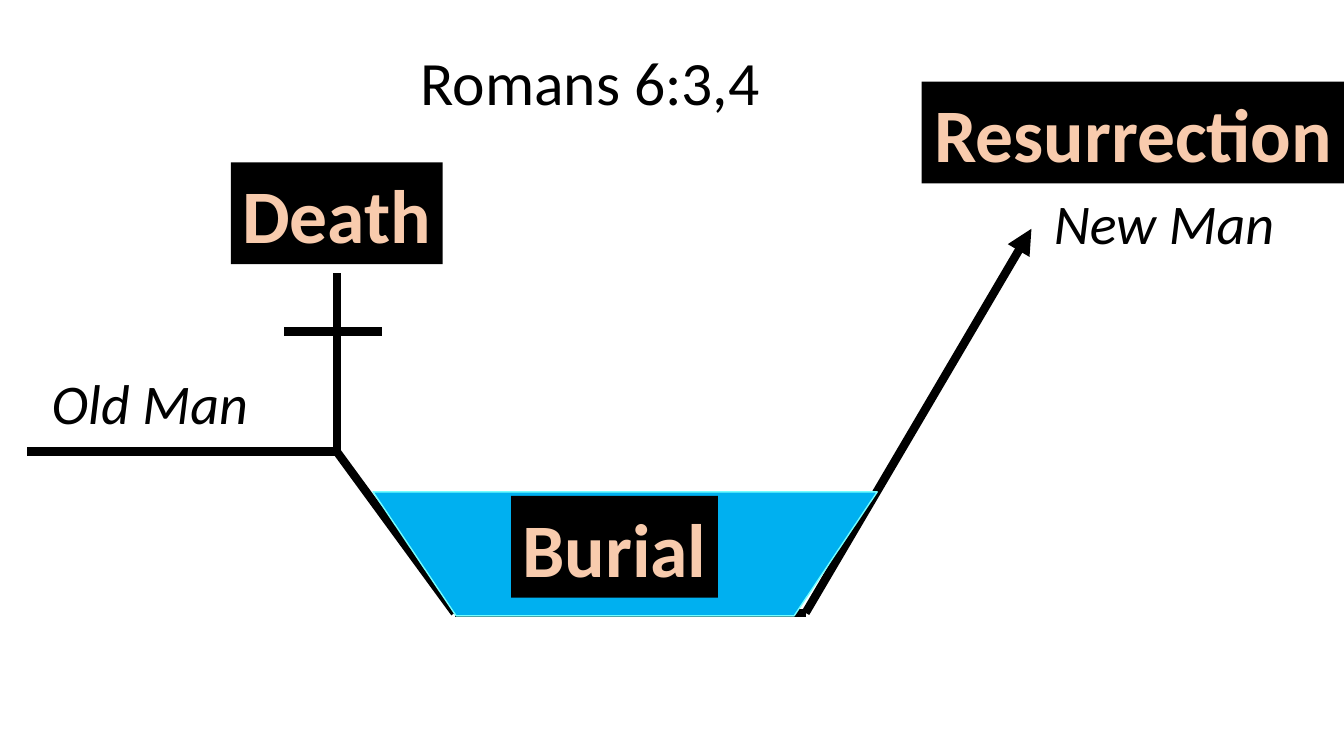
"""Builds the Romans 6:3,4 slide on death, burial and resurrection."""
from lxml.etree import SubElement
from pptx import Presentation
from pptx.dml.color import RGBColor
from pptx.enum.shapes import MSO_CONNECTOR, MSO_SHAPE
from pptx.enum.text import MSO_ANCHOR, MSO_AUTO_SIZE, PP_ALIGN
from pptx.oxml.ns import qn
from pptx.util import Inches, Pt

COLOURS = {"ink": "000000", "water": "00B0F0", "water_edge": "73FEFF",
           "label": "F8CBAD", "label_edge": "ED7D31"}
LEFT_BANK = (3.34, 4.48)
POOL_LEFT = (4.51, 6.08)
POOL_RIGHT = (7.99, 6.08)
PATH_LINES = [((0.27, 4.48), LEFT_BANK), (LEFT_BANK, POOL_LEFT),
              (POOL_LEFT, POOL_RIGHT)]
CROSS_LINES = [((3.34, 2.71), LEFT_BANK), ((2.82, 3.29), (3.79, 3.29))]
CAPTIONS = [("Old Man", (0.36, 3.61, 2.25, 1.31)),
            ("New Man", (10.1, 1.82, 2.89, 1.31))]
STAGES = [("Death", (2.29, 1.61, 2.1, 1.01)),
          ("Burial", (5.07, 4.92, 2.05, 1.01)),
          ("Resurrection", (9.14, 0.81, 4.2, 1.01))]


def colour(name):
    """Return a named colour."""
    return RGBColor.from_string(COLOURS[name])


def write_text(shape, text, colour_name, font_format, frame_format, alignment):
    """Write one formatted paragraph into a shape."""
    frame = shape.text_frame
    for name, value in frame_format.items():
        setattr(frame, name, value)
    paragraph = frame.paragraphs[0]
    paragraph.alignment = alignment
    run = paragraph.add_run()
    run.text = text
    for name, value in {"name": "Calibri", **font_format}.items():
        setattr(run.font, name, value)
    run.font.color.rgb = colour(colour_name)
    return run


def add_title(slide, text):
    """Place the title at the top of the slide."""
    title = slide.shapes.title
    box = {"left": 3.79, "top": 0.39, "width": 4.19, "height": 0.84}
    for name, value in box.items():
        setattr(title, name, Inches(value))
    write_text(title, text, "ink", {"size": Pt(44)},
               {"word_wrap": True, "auto_size": MSO_AUTO_SIZE.NONE,
                "vertical_anchor": MSO_ANCHOR.TOP,
                "margin_left": Inches(0.38)}, PP_ALIGN.LEFT)


def add_line(slide, start, end, arrow=False):
    """Draw a thick line, with an arrowhead at its end if wanted."""
    line = slide.shapes.add_connector(
        MSO_CONNECTOR.STRAIGHT, *map(Inches, start + end))
    line.line.width = Pt(6)
    line.line.color.rgb = colour("ink")
    if arrow:
        SubElement(line.line._get_or_add_ln(), qn("a:tailEnd"), type="triangle")
    SubElement(line._element.spPr, qn("a:effectLst"))


def add_filled_shape(slide, kind, box, fill_name):
    """Add a flat shape without a border."""
    shape = slide.shapes.add_shape(kind, *map(Inches, box))
    shape.shadow.inherit = False
    shape.fill.solid()
    shape.fill.fore_color.rgb = colour(fill_name)
    shape.line.fill.background()
    return shape


def add_water(slide):
    """Draw the pool as an upside-down trapezoid."""
    water = add_filled_shape(slide, MSO_SHAPE.TRAPEZOID,
                             (3.7, 4.88, 5, 1.23), "water")
    water.rotation = 180
    water.adjustments[0] = 0.67
    water.line.color.rgb = colour("water_edge")
    water.line.width = Pt(1)


def add_caption(slide, text, box):
    """Add an italic caption."""
    caption = slide.shapes.add_textbox(*map(Inches, box))
    write_text(caption, text, "ink", {"size": Pt(40), "italic": True},
               {"word_wrap": True}, PP_ALIGN.CENTER)


def add_stage(slide, text, box):
    """Add a black box with an outlined stage name."""
    stage = add_filled_shape(slide, MSO_SHAPE.RECTANGLE, box, "ink")
    run = write_text(stage, text, "label", {"size": Pt(54), "bold": True},
                     {"word_wrap": False,
                      "auto_size": MSO_AUTO_SIZE.SHAPE_TO_FIT_TEXT},
                     PP_ALIGN.CENTER)
    properties = run.font._element
    outline = SubElement(properties, qn("a:ln"), w=str(Pt(1.75)))
    fill = SubElement(outline, qn("a:solidFill"))
    SubElement(fill, qn("a:srgbClr"), val=COLOURS["label_edge"])
    properties.insert(0, outline)


def main():
    """Build and save the slide."""
    presentation = Presentation()
    presentation.slide_width = Inches(13.33)
    presentation.slide_height = Inches(7.5)
    slide = presentation.slides.add_slide(presentation.slide_layouts[5])
    add_title(slide, "Romans 6:3,4")
    for start, end in PATH_LINES:
        add_line(slide, start, end)
    add_line(slide, POOL_RIGHT, (10.23, 2.27), arrow=True)
    for start, end in CROSS_LINES:
        add_line(slide, start, end)
    add_water(slide)
    for text, box in CAPTIONS:
        add_caption(slide, text, box)
    for text, box in STAGES:
        add_stage(slide, text, box)
    presentation.save("out.pptx")


if __name__ == "__main__":
    main()
